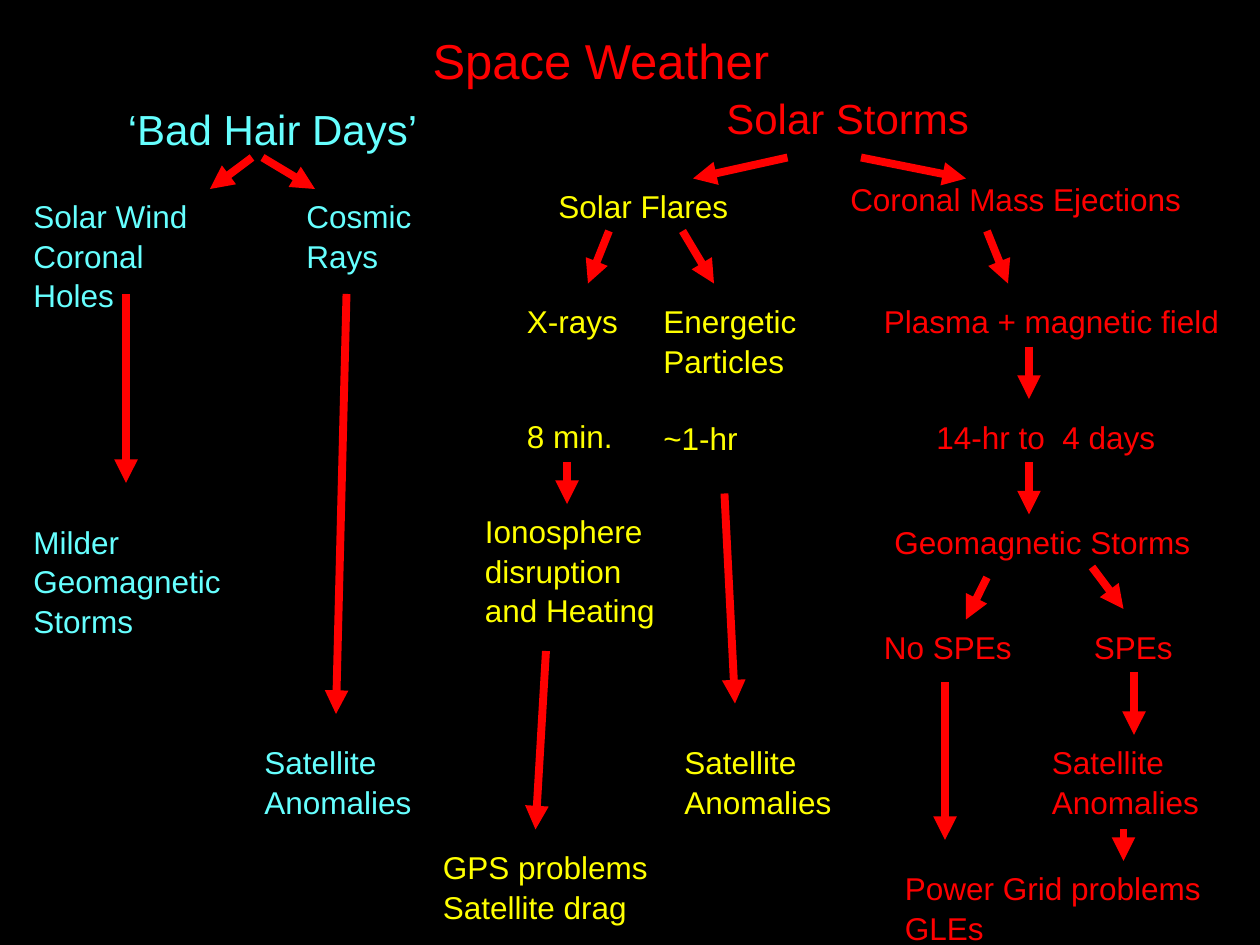
from dataclasses import dataclass

from lxml.etree import SubElement
from pptx import Presentation
from pptx.dml.color import RGBColor as Rgb
from pptx.enum.shapes import MSO_CONNECTOR as Link
from pptx.enum.text import MSO_ANCHOR as Anchor, MSO_AUTO_SIZE as Fit, PP_ALIGN as Align
from pptx.oxml.ns import qn
from pptx.util import Cm, Pt


@dataclass(frozen=True)
class Theme:
    font: str = "Arial"
    back: Rgb = Rgb(0, 0, 0)
    red: Rgb = Rgb(0xFF, 0, 0)
    cyan: Rgb = Rgb(0x66, 0xFF, 0xFF)
    gold: Rgb = Rgb(0xFF, 0xFF, 0)
    title: int = 28
    head: int = 24
    text: int = 18
    line: float = 4.5
    lead: float = 1.05  # line spacing


def grid(n):
    """Places lie on a grid of 12 steps to 2.54 cm."""
    return Cm(n * 2.54 / 12)


class Chart:
    def __init__(self, deck, theme):
        self.theme = theme
        self.slide = deck.slides.add_slide(deck.slide_layouts[5])
        fill = self.slide.background.fill
        fill.solid()
        fill.fore_color.rgb = theme.back

    def fill_text(self, shape, rows, size, color, wrap=False):
        """One paragraph per row; an empty row opens a gap of one line."""
        frame = shape.text_frame
        frame.word_wrap = wrap
        frame.auto_size = Fit.SHAPE_TO_FIT_TEXT
        frame.vertical_anchor = Anchor.TOP
        gap = 0
        for i, row in enumerate(rows):
            if not row:
                gap += 1
                continue
            para = frame.add_paragraph() if i else frame.paragraphs[0]
            para.alignment = Align.LEFT
            para.line_spacing = self.theme.lead
            para.space_before = Pt(gap * size * 1.2)
            gap = 0
            run = para.add_run()
            run.text = row
            run.font.name = self.theme.font
            run.font.size = Pt(size)
            run.font.color.rgb = color

    def title(self, x, y, wide, text):
        size = self.theme.title
        shape = self.slide.shapes.title
        shape.left, shape.top = grid(x), grid(y)
        shape.width, shape.height = Cm(wide), self.tall(size, 1)
        self.fill_text(shape, [text], size, self.theme.red)

    def label(self, x, y, wide, text, color, size=None, wrap=False):
        size = size or self.theme.text
        rows = text.split("|")
        box = self.slide.shapes.add_textbox(
            grid(x), grid(y), Cm(wide), self.tall(size, len(rows)))
        self.fill_text(box, rows, size, color, wrap)

    def tall(self, size, rows):
        return Cm(0.25) + Pt(size * 1.2 * rows)

    def arrow(self, *ends):
        link = self.slide.shapes.add_connector(
            Link.STRAIGHT, *[grid(n) for n in ends])
        link.line.color.rgb = self.theme.red
        link.line.width = Pt(self.theme.line)
        props = link._element.spPr
        SubElement(props.find(qn("a:ln")), qn("a:tailEnd"), type="triangle")
        SubElement(props, qn("a:effectLst"))


def main():
    deck = Presentation()
    deck.slide_width, deck.slide_height = Cm(25.4), Cm(19.05)
    look = Theme()
    chart = Chart(deck, look)

    # Title and the two branch heads
    chart.title(40, 2, 7.34, "Space Weather")
    chart.label(11, 9, 6.35, "‘Bad Hair Days’", look.cyan, look.head)
    chart.label(68, 8, 5.41, "Solar Storms", look.red, look.head)

    # Labels by branch: left, top (grid), width (cm), text
    parts = {
        look.cyan: [
            (2, 18, 4.52, "Solar Wind|Coronal Holes"),
            (28, 18, 2.62, "Cosmic|Rays"),
            (24, 70, 3.48, "Satellite|Anomalies"),
        ],
        look.gold: [
            (52, 17, 3.94, "Solar Flares"),
            (49, 28, 2.34, "X-rays|||8 min."),
            (62, 28, 3.2, "Energetic|Particles||~1-hr"),
            (45, 48, 3.94, "Ionosphere|disruption|and Heating"),
            (64, 70, 3.48, "Satellite|Anomalies"),
            (41, 80, 4.65, "GPS problems|Satellite drag"),
        ],
        look.red: [
            (79.8, 16.4, 7.19, "Coronal Mass Ejections"),
            (83, 28, 7.26, "Plasma + magnetic field"),
            (88, 39, 4.93, "14-hr to  4 days"),
            (83, 59, 3.1, "No SPEs"),
            (103, 59, 2.11, "SPEs"),
            (99, 70, 3.48, "Satellite|Anomalies"),
            (85, 82, 6.48, "Power Grid problems|GLEs"),
        ],
    }
    for color, items in parts.items():
        for item in items:
            chart.label(*item, color)
    chart.label(2, 49, 4.45, "Milder|Geomagnetic|Storms", look.cyan, wrap=True)
    chart.label(84, 49, 6.99, "Geomagnetic Storms", look.red, wrap=True)

    # Arrows: from x, y to x, y (grid)
    for ends in [
        # Bad hair days
        (24, 15, 20, 18), (25, 15, 30, 18),
        (12, 28, 12, 46), (33, 28, 32, 68),
        # Solar storms
        (75, 15, 66, 17), (82, 15, 92, 17),
        # Flares
        (58, 22, 56, 27), (65, 22, 68, 27), (54, 44, 54, 48),
        (52, 62, 51, 79), (69, 47, 70, 67),
        # Mass ejections
        (94, 22, 96, 27), (98, 33, 98, 38), (98, 44, 98, 49),
        (94, 55, 92, 59), (104, 54, 107, 58),
        (90, 65, 90, 80), (108, 64, 108, 70), (107, 79, 107, 82),
    ]:
        chart.arrow(*ends)

    deck.save("out.pptx")


if __name__ == "__main__":
    main()
